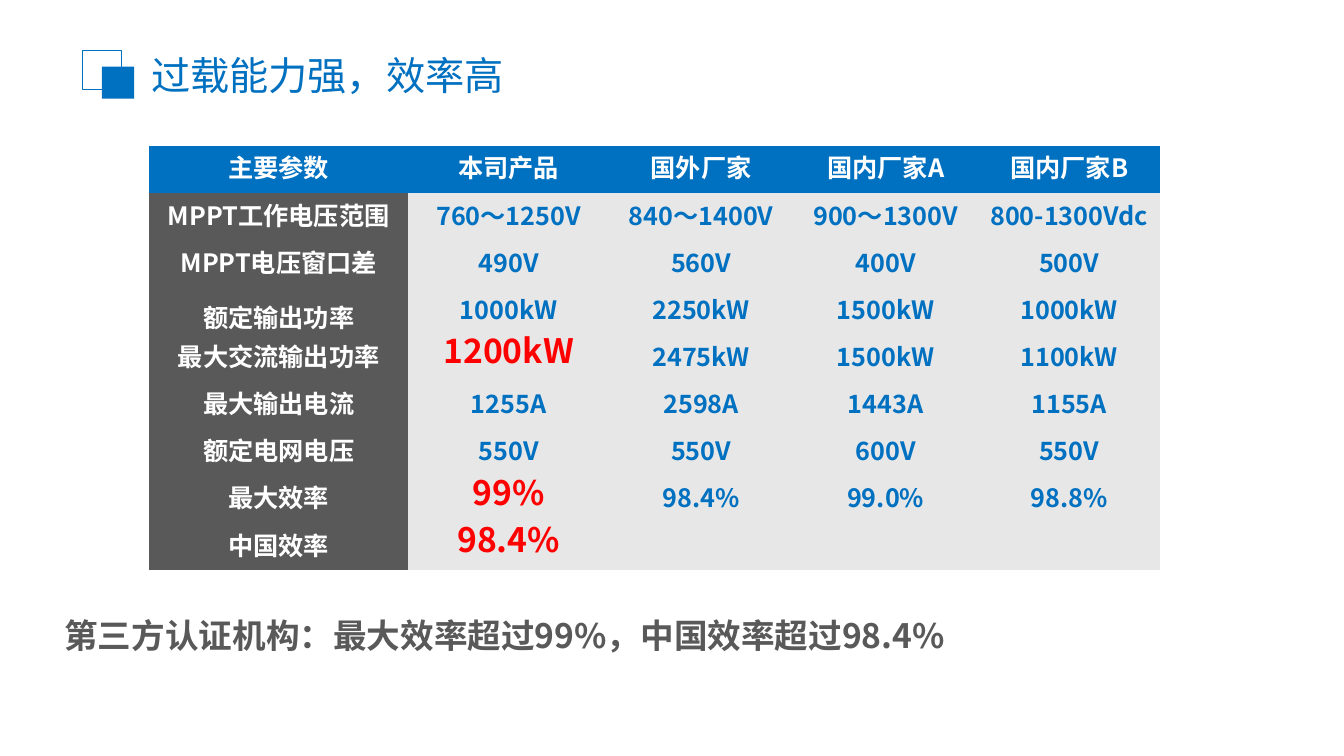
from pptx import Presentation
from pptx.dml.color import RGBColor
from pptx.enum.shapes import MSO_SHAPE
from pptx.enum.text import MSO_ANCHOR, MSO_AUTO_SIZE, PP_ALIGN
from pptx.oxml.ns import qn
from pptx.util import Inches, Pt
from lxml import etree

RECT = MSO_SHAPE.RECTANGLE
MIDDLE, BOTTOM = MSO_ANCHOR.MIDDLE, MSO_ANCHOR.BOTTOM
LEFT, CENTER = PP_ALIGN.LEFT, PP_ALIGN.CENTER
NO_FIT = MSO_AUTO_SIZE.NONE

BLUE = RGBColor(0x00, 0x70, 0xC0)
DARK = RGBColor(0x59, 0x59, 0x59)
PALE = RGBColor(0xE7, 0xE7, 0xE7)
RED = RGBColor(0xFF, 0x00, 0x00)
WHITE = RGBColor(0xFF, 0xFF, 0xFF)
FACE = "Noto Sans CJK SC"
PLAIN = "{2D5ABB26-0587-4C30-8999-92F81FD0307C}"  # no style, no grid

# Content
TITLE = "过载能力强，效率高"
NOTE = "第三方认证机构：最大效率超过99%，中国效率超过98.4%"
ROWS = [
    ("主要参数", "本司产品", "国外厂家", "国内厂家A", "国内厂家B"),
    ("MPPT工作电压范围", "760～1250V", "840～1400V", "900～1300V", "800-1300Vdc"),
    ("MPPT电压窗口差", "490V", "560V", "400V", "500V"),
    ("额定输出功率", "1000kW", "2250kW", "1500kW", "1000kW"),
    ("最大交流输出功率", "1200kW", "2475kW", "1500kW", "1100kW"),
    ("最大输出电流", "1255A", "2598A", "1443A", "1155A"),
    ("额定电网电压", "550V", "550V", "600V", "550V"),
    ("最大效率", "99%", "98.4%", "99.0%", "98.8%"),
    ("中国效率", "98.4%", "", "", ""),
]
WIDTHS = [2.57, 1.99, 1.83, 1.83, 1.81]
STRONG = {(4, 1), (7, 1), (8, 1)}
LOW = (3, 0)


def style(para, size, color, bold, align):
    para.alignment = align
    font = para.font
    font.name, font.size, font.bold = FACE, Pt(size), bold
    font.color.rgb = color
    # East Asian typeface follows the Latin one
    latin = para._p.pPr.find(qn("a:defRPr")).find(qn("a:latin"))
    east = etree.Element(qn("a:ea"), typeface=FACE)
    latin.addnext(east)


def square(left, top, side):
    shape = slide.shapes.add_shape(
        RECT, Inches(left), Inches(top), Inches(side), Inches(side))
    shape.shadow.inherit = False
    shape.line.color.rgb = BLUE
    shape.line.width = Pt(0.75)
    return shape


def place(shape, left, top, width, height):
    shape.left, shape.top = Inches(left), Inches(top)
    shape.width, shape.height = Inches(width), Inches(height)


def write(shape, text, size, color, bold, inset):
    frame = shape.text_frame
    frame.text = text
    frame.word_wrap = True
    frame.auto_size = NO_FIT
    frame.vertical_anchor = MIDDLE
    frame.margin_top = frame.margin_bottom = Inches(inset)
    para = frame.paragraphs[0]
    style(para, size, color, bold, LEFT)
    return para


deck = Presentation()
deck.slide_width, deck.slide_height = Inches(13.33), Inches(7.5)
slide = deck.slides.add_slide(deck.slide_layouts[5])

# Title with its two squares
square(0.82, 0.5, 0.39).fill.background()
block = square(1.01, 0.66, 0.32)
block.fill.solid()
block.fill.fore_color.rgb = BLUE
block.line.fill.background()
title = slide.shapes.title
place(title, 1.4, 0.46, 10.5, 0.57)
write(title, TITLE, 28, BLUE, False, 0)

# Table of parameters
frame = slide.shapes.add_table(
    len(ROWS), len(WIDTHS), Inches(1.48), Inches(1.45),
    Inches(sum(WIDTHS)), Inches(4.21))
table = frame.table
table.horz_banding = False
table._tbl.tblPr.find(qn("a:tableStyleId")).text = PLAIN
for col, width in zip(table.columns, WIDTHS):
    col.width = Inches(width)
for r, row in enumerate(ROWS):
    for c, text in enumerate(row):
        cell = table.cell(r, c)
        cell.fill.solid()
        cell.fill.fore_color.rgb = BLUE if r == 0 else DARK if c == 0 else PALE
        cell.vertical_anchor = BOTTOM if (r, c) == LOW else MIDDLE
        cell.margin_left = cell.margin_right = Inches(0.07)
        cell.margin_top = cell.margin_bottom = 0
        if not text:
            continue
        cell.text = text
        para = cell.text_frame.paragraphs[0]
        para.line_spacing = Pt(22)
        if (r, c) in STRONG:
            style(para, 24, RED, True, CENTER)
        else:
            style(para, 18, BLUE if r and c else WHITE, True, CENTER)

# Closing statement
note = slide.shapes.add_textbox(0, 0, 0, 0)
place(note, 0.54, 5.89, 12.3, 0.62)
write(note, NOTE, 24, DARK, True, 0.04).line_spacing = 1.5

deck.save("out.pptx")
